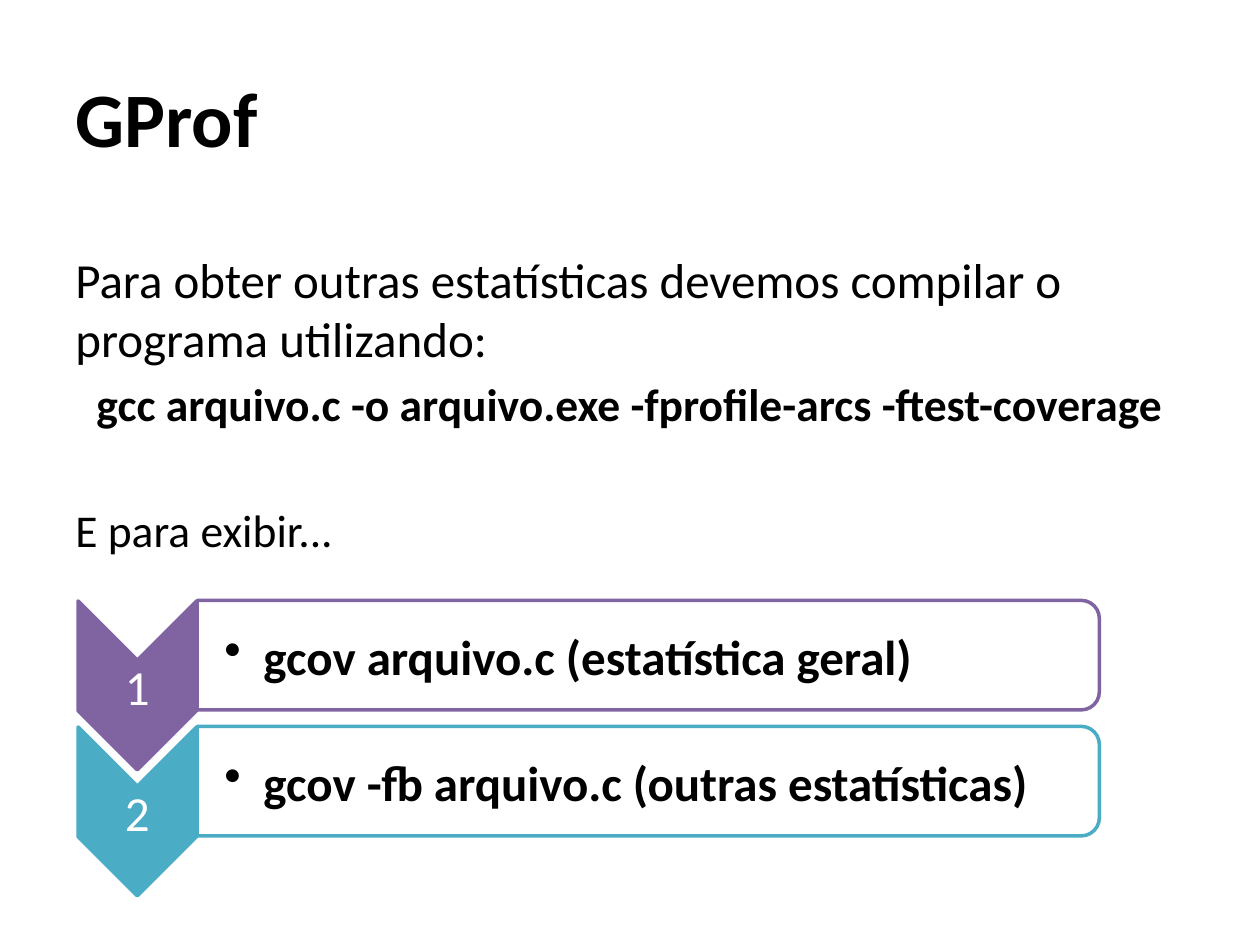
from dataclasses import dataclass

from lxml import etree
from pptx import Presentation
from pptx.dml.color import RGBColor
from pptx.enum.shapes import MSO_SHAPE
from pptx.enum.text import MSO_ANCHOR, PP_ALIGN
from pptx.oxml.ns import qn
from pptx.util import Inches, Pt

CHEVRON = MSO_SHAPE.CHEVRON
ROUND_TOP = MSO_SHAPE.ROUND_2_SAME_RECTANGLE
TOP, MIDDLE = MSO_ANCHOR.TOP, MSO_ANCHOR.MIDDLE
LEFT, CENTER = PP_ALIGN.LEFT, PP_ALIGN.CENTER


@dataclass(frozen=True)
class Theme:
    font: str = "Calibri"
    black: RGBColor = RGBColor(0, 0, 0)
    white: RGBColor = RGBColor(255, 255, 255)
    purple: RGBColor = RGBColor(0x80, 0x64, 0xA2)
    teal: RGBColor = RGBColor(0x4B, 0xAC, 0xC6)
    title: Pt = Pt(44)
    large: Pt = Pt(28)
    body: Pt = Pt(26)


theme = Theme()
presentation = Presentation()
presentation.slide_width, presentation.slide_height = Inches(10), Inches(7.5)
slide = presentation.slides.add_slide(presentation.slide_layouts[6])


def add_text(box, lines, anchor=TOP, insets=(0.1, 0.05), color=theme.black, bullet=False):
    frame = slide.shapes.add_textbox(*map(Inches, box)).text_frame
    frame.word_wrap = True
    frame.vertical_anchor = anchor
    frame.margin_left = Inches(insets[0])
    frame.margin_right = Inches(min(insets[0], 0.1) if not bullet else 0.02)
    frame.margin_top = frame.margin_bottom = Inches(insets[1])
    for index, (text, size, bold, align, before) in enumerate(lines):
        paragraph = frame.add_paragraph() if index else frame.paragraphs[0]
        paragraph.text = text
        paragraph.alignment = align
        paragraph.space_before = Pt(before)
        if bullet:
            properties = paragraph._p.get_or_add_pPr()
            properties.set("marL", str(Inches(0.31)))
            properties.set("indent", str(-Inches(0.31)))
            etree.SubElement(properties, qn("a:buChar"), char="•")
        paragraph.font.name = theme.font
        paragraph.font.size = size
        paragraph.font.bold = bold
        paragraph.font.color.rgb = color


def add_rotated(kind, box, fill, line):
    shape = slide.shapes.add_shape(kind, *map(Inches, box))
    shape.rotation = 90
    shape.shadow.inherit = False
    shape.fill.solid()
    shape.fill.fore_color.rgb = fill
    shape.line.color.rgb = line
    shape.line.width = Pt(2)


add_text((0.5, 0.3, 9, 1.25), [("GProf", theme.title, True, LEFT, 0)], MIDDLE)
add_text((0.5, 1.93, 9, 4.95), [
    ("Para obter outras estatísticas devemos compilar o programa utilizando:",
     theme.large, False, LEFT, 0),
    ("gcc arquivo.c -o arquivo.exe -fprofile-arcs -ftest-coverage",
     theme.body, True, CENTER, 5.2),
    ("E para exibir...", theme.body, False, LEFT, 41),
])

steps = [
    ("gcov arquivo.c (estatística geral)", theme.purple),
    ("gcov -fb arquivo.c (outras estatísticas)", theme.teal),
]
for index, (command, color) in enumerate(steps):
    add_rotated(CHEVRON, (0.42, 4.97 + index, 1.34, 0.94), color, color)
    add_text((0.62, 5.24 + index, 0.94, 0.4),
             [(str(index + 1), theme.large, False, CENTER, 0)],
             MIDDLE, (0.02, 0.02), theme.white)
    add_rotated(ROUND_TOP, (4.71, 1.62 + index, 0.87, 7.16), theme.white, color)
    add_text((1.56, 4.81 + index, 7.12, 0.79),
             [(command, theme.large, True, LEFT, 0)],
             MIDDLE, (0.22, 0.02), bullet=True)

presentation.save("out.pptx")
